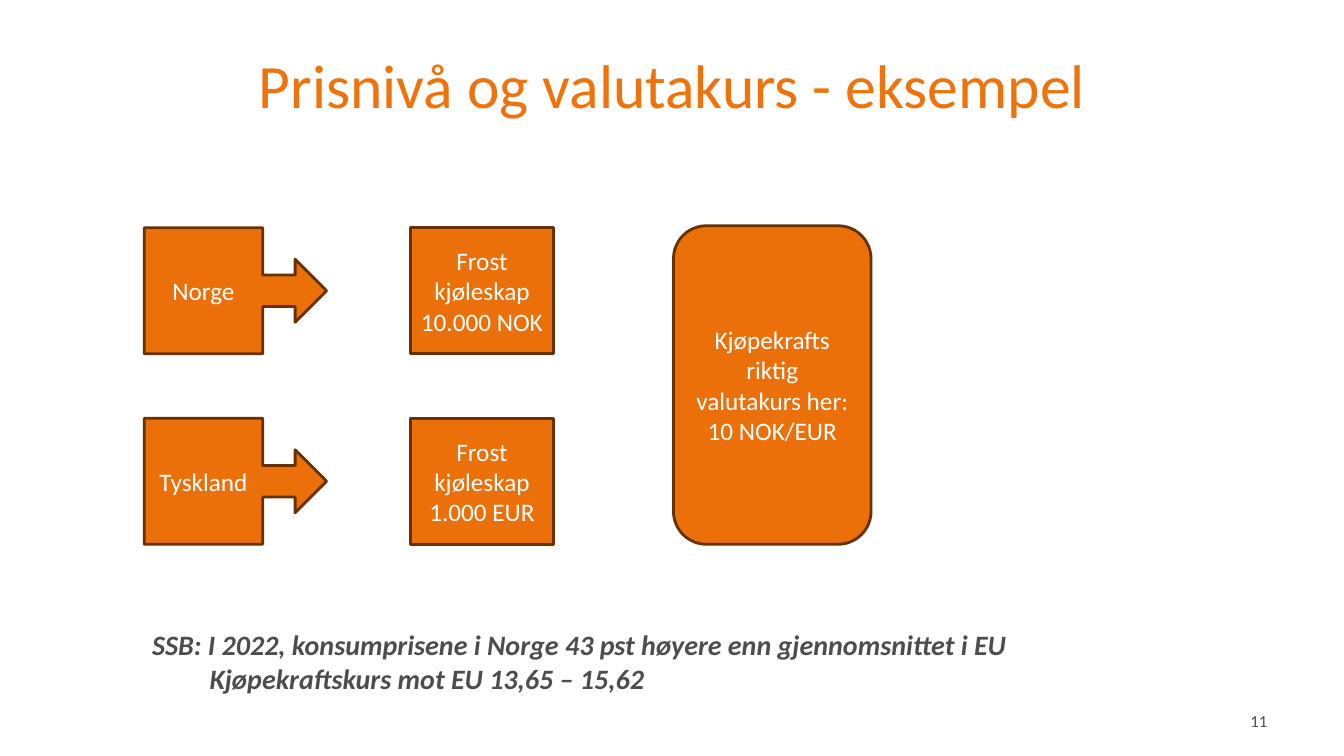
from dataclasses import dataclass

from pptx import Presentation
from pptx.dml.color import RGBColor
from pptx.enum.shapes import MSO_SHAPE as Kind
from pptx.enum.text import MSO_ANCHOR as Anchor, MSO_AUTO_SIZE as Fit, PP_ALIGN as Align
from pptx.slide import Slide
from pptx.text.text import TextFrame
from pptx.util import Inches, Pt

ORANGE = RGBColor(0xEC, 0x70, 0x0A)
TITLE = RGBColor(0xF0, 0x72, 0x0A)
BROWN = RGBColor(0x67, 0x31, 0x04)
WHITE = RGBColor(0xFF, 0xFF, 0xFF)
GREY = RGBColor(0x4D, 0x4D, 0x4D)


@dataclass
class Style:
    size: int
    color: RGBColor
    align: Align = Align.CENTER
    strong: bool = False


@dataclass
class Box:
    kind: Kind
    area: tuple[float, float, float, float]
    lines: list[str]


def write(frame: TextFrame, lines: list[str], style: Style, anchor: Anchor = Anchor.MIDDLE) -> None:
    setup = {"word_wrap": True, "auto_size": Fit.NONE, "vertical_anchor": anchor}
    for name, value in setup.items():
        setattr(frame, name, value)
    look = {"name": "Calibri", "size": Pt(style.size), "bold": style.strong, "italic": style.strong}
    frame.text = "\n".join(lines)
    for para in frame.paragraphs:
        para.alignment = style.align
        for run in para.runs:
            for name, value in look.items():
                setattr(run.font, name, value)
            run.font.color.rgb = style.color


def draw(slide: Slide, box: Box) -> None:
    shape = slide.shapes.add_shape(box.kind, *map(Inches, box.area))
    shape.shadow.inherit = False
    shape.fill.solid()
    shape.fill.fore_color.rgb = ORANGE
    shape.line.color.rgb = BROWN
    shape.line.width = Pt(2)
    write(shape.text_frame, box.lines, Style(18, WHITE))


def note(slide: Slide, area: tuple[float, float, float, float], lines: list[str],
         style: Style, anchor: Anchor) -> TextFrame:
    frame = slide.shapes.add_textbox(*map(Inches, area)).text_frame
    write(frame, lines, style, anchor)
    return frame


def main() -> None:
    deck = Presentation()
    deck.slide_width, deck.slide_height = Inches(13.33), Inches(7.5)
    slide = deck.slides.add_slide(deck.slide_layouts[5])

    # Title
    title = slide.shapes.title
    for name, value in {"left": 0.67, "top": 0.21, "width": 12, "height": 1.25}.items():
        setattr(title, name, Inches(value))
    write(title.text_frame, ["Prisnivå og valutakurs - eksempel"], Style(44, TITLE))

    # One row per country: callout and price
    rows = [("Norge", "10.000 NOK"), ("Tyskland", "1.000 EUR")]
    for i, (land, price) in enumerate(rows):
        top = 2.26 + 1.89 * i
        draw(slide, Box(Kind.RIGHT_ARROW_CALLOUT, (1.43, top, 1.81, 1.25), [land]))
        draw(slide, Box(Kind.RECTANGLE, (4.07, top, 1.42, 1.25), [f"Frost kjøleskap {price}"]))

    # Resulting exchange rate
    draw(slide, Box(Kind.ROUNDED_RECTANGLE, (6.68, 2.24, 1.96, 3.16),
                    ["Kjøpekrafts riktig valutakurs her:", "10 NOK/EUR"]))

    # Slide number and statistics
    note(slide, (9.56, 6.95, 3.11, 0.4), ["11"], Style(12, GREY, Align.RIGHT), Anchor.MIDDLE)
    facts = note(slide, (1.41, 6.18, 8.74, 0.77),
                 ["SSB: I 2022, konsumprisene i Norge 43 pst høyere enn gjennomsnittet i EU",
                  "Kjøpekraftskurs mot EU 13,65 – 15,62"],
                 Style(20, GREY, Align.LEFT, True), Anchor.TOP)
    facts.word_wrap = False
    facts.paragraphs[1]._p.get_or_add_pPr().set("marL", str(Inches(0.57)))

    deck.save("out.pptx")


if __name__ == "__main__":
    main()
